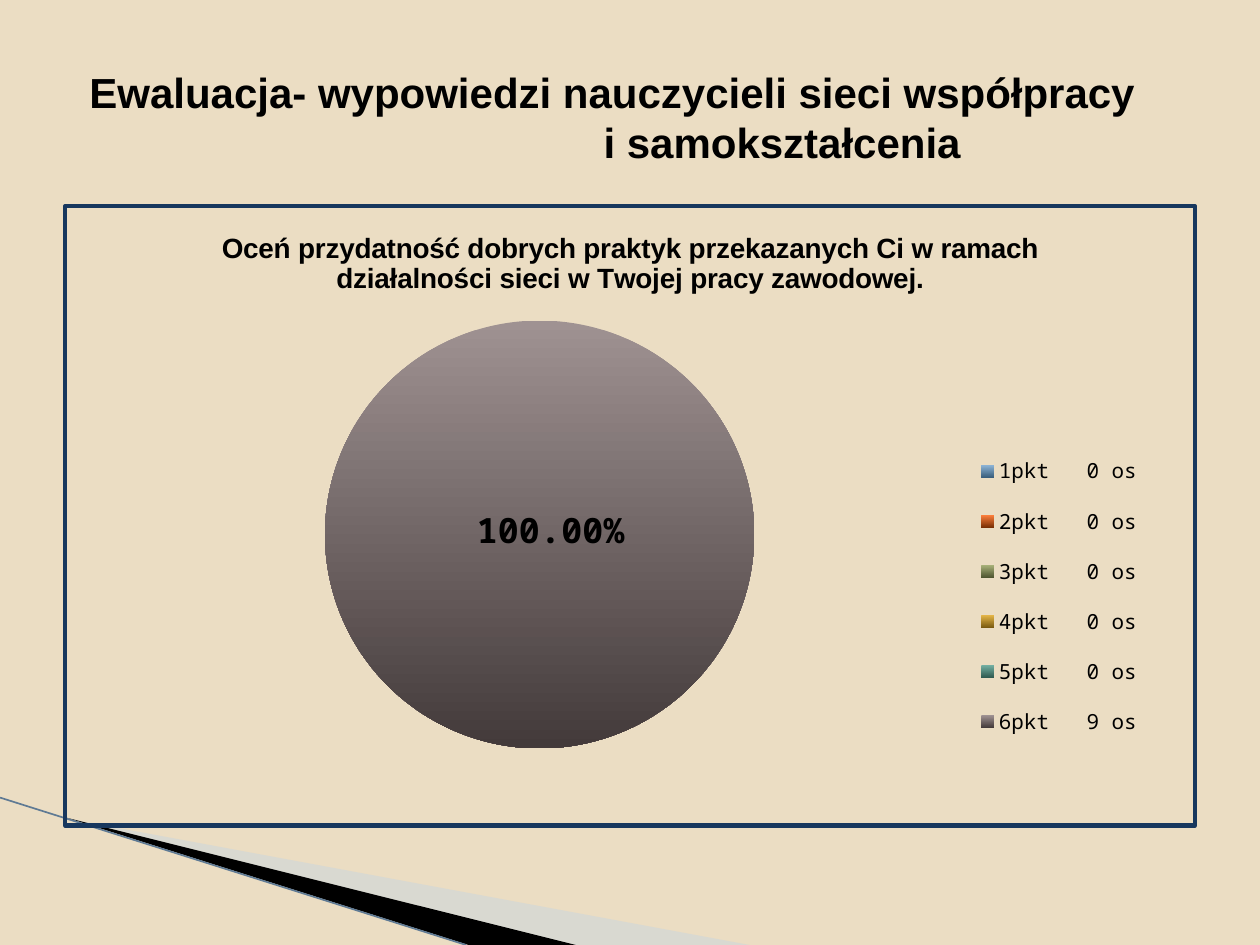
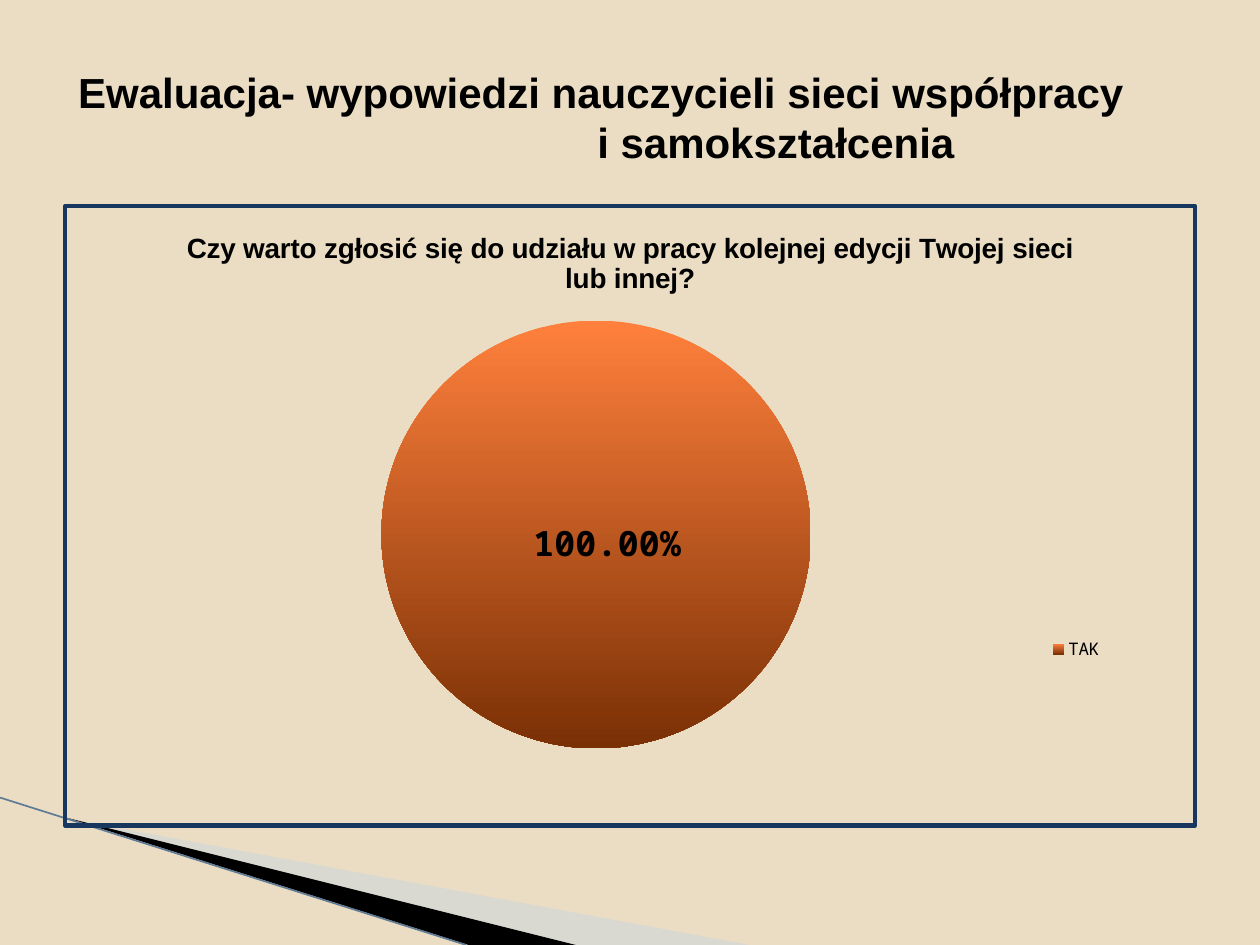
from dataclasses import dataclass
from lxml import etree
from pptx import Presentation
from pptx import util as u
from pptx.chart.data import CategoryChartData
from pptx.dml.color import RGBColor
from pptx.enum import chart as charts, shapes, text
from pptx.oxml import parse_xml
from pptx.oxml.ns import nsdecls, qn


@dataclass(frozen=True)
class Theme:
    sand: str = "EBDDC3"
    ink: str = "000000"
    frame: str = "17375E"
    mist: str = "C0D3E6"
    ray: str = "5F7A94"
    heading_font: str = "Arial"
    chart_font: str = "Noto Sans Mono"
    title_size: int = 24
    question_size: int = 16
    label_size: int = 20
    small_size: int = 10
    legend_size: int = 12


THEME = Theme()
BLUE = ("8FB6D8", "3A5F7D")
ORANGE = ("FF803C", "7A3005")
GREEN = ("A9B27A", "4F5630")
GOLD = ("E5B648", "7A5A10")
TEAL = ("73AFA2", "2F5A50")
GREY = ("9F9292", "433A3A")
TITLE_LINES = ("Ewaluacja- wypowiedzi nauczycieli sieci współpracy", "i samokształcenia")


def color(code):
    return RGBColor.from_string(code)


def style_font(font, name, size, bold=False):
    font.name = name
    font.size = u.Pt(size)
    font.bold = bold
    font.color.rgb = color(THEME.ink)


def write(para, words, indent=0, **style):
    props = para._p.get_or_add_pPr()
    props.set("marL", str(u.Inches(indent)))
    props.set("indent", "0")
    para.alignment = text.PP_ALIGN.LEFT
    para.space_before = u.Pt(0)
    span = para.add_run()
    span.text = words
    style_font(span.font, **style)


def arrange(parent, index, target=None, **place):
    for old in parent.findall(qn("c:layout")):
        parent.remove(old)
    layout = etree.Element(qn("c:layout"))
    manual = etree.SubElement(layout, qn("c:manualLayout"))
    if target:
        etree.SubElement(manual, qn("c:layoutTarget")).set("val", target)
    if "w" in place:
        for mode in ("xMode", "yMode"):
            etree.SubElement(manual, qn(f"c:{mode}")).set("val", "edge")
    for key, value in place.items():
        etree.SubElement(manual, qn(f"c:{key}")).set("val", str(value))
    parent.insert(index, layout)


class Builder:
    def __init__(self, theme):
        self.theme = theme
        self.deck = Presentation()
        self.deck.slide_width = u.Inches(10)
        self.deck.slide_height = u.Inches(7.5)
        self.page = None

    def start_page(self, indents):
        self.page = self.deck.slides.add_slide(self.deck.slide_layouts[5])
        fill = self.page.background.fill
        fill.solid()
        fill.fore_color.rgb = color(self.theme.sand)
        self.wedge([(0.55, 6.5), (5.95, 7.5), (4.56, 7.5)], self.theme.mist, 40)
        self.wedge([(0.53, 6.49), (4.57, 7.5), (3.72, 7.5)], self.theme.ink)
        self.line((0, 6.33), (3.7, 7.5), self.theme.ray, 0.95)
        self.title(indents)

    def title(self, indents):
        box = self.page.shapes.title
        box.left, box.top, box.width, box.height = map(u.Inches, (0.5, 0.3, 9, 1.25))
        frame = box.text_frame
        frame.word_wrap = True
        frame.auto_size = text.MSO_AUTO_SIZE.NONE
        frame.vertical_anchor = text.MSO_ANCHOR.MIDDLE
        for number, (words, indent) in enumerate(zip(TITLE_LINES, indents)):
            para = frame.add_paragraph() if number else frame.paragraphs[0]
            write(para, words, indent, name=self.theme.heading_font,
                  size=self.theme.title_size, bold=True)

    def wedge(self, points, shade, opacity=100):
        corners = [(u.Inches(x), u.Inches(y)) for x, y in points]
        outline = self.page.shapes.build_freeform(*corners[0])
        outline.add_line_segments(corners[1:], close=True)
        shape = outline.convert_to_shape()
        shape.shadow.inherit = False
        shape.line.fill.background()
        shape.fill.solid()
        shape.fill.fore_color.rgb = color(shade)
        if opacity < 100:
            tone = shape._element.spPr.find(f"{qn('a:solidFill')}/{qn('a:srgbClr')}")
            etree.SubElement(tone, qn("a:alpha")).set("val", str(opacity * 1000))

    def line(self, start, end, shade, weight):
        ray = self.page.shapes.add_connector(
            shapes.MSO_CONNECTOR.STRAIGHT, *map(u.Inches, start + end))
        ray.line.color.rgb = color(shade)
        ray.line.width = u.Pt(weight)
        etree.SubElement(ray._element.spPr, qn("a:effectLst"))

    def pie(self, question, values, shades, pie_left, legend, legend_size, label_offset):
        data = CategoryChartData()
        data.categories = list(values)
        data.add_series("Series 1", list(values.values()))
        chart = self.page.shapes.add_chart(
            charts.XL_CHART_TYPE.PIE,
            *map(u.Inches, (0.5, 1.62, 9, 4.95)), data).chart
        style_font(chart.font, self.theme.chart_font, self.theme.small_size)
        plot = chart.plots[0]
        plot.vary_by_categories = True
        points = plot.series[0].points
        for number, (top, bottom) in enumerate(shades):
            fill = points[number].format.fill
            fill.gradient()
            fill.gradient_angle = 270
            for stop, shade in zip(fill.gradient_stops, (top, bottom)):
                stop.color.rgb = color(shade)
        self.question(chart, question)
        self.legend(chart, legend, legend_size)
        self.share(chart, points[len(values) - 1], label_offset)
        area = chart.element.xpath("c:chart/c:plotArea")[0]
        arrange(area, 0, "inner", x=pie_left, y=0.18, w=0.38, h=0.7)
        self.border(chart)

    def question(self, chart, words):
        chart.has_title = True
        span = chart.chart_title.text_frame.paragraphs[0].add_run()
        span.text = words
        style_font(span.font, self.theme.heading_font, self.theme.question_size, True)

    def legend(self, chart, place, size):
        chart.has_legend = True
        chart.legend.position = charts.XL_LEGEND_POSITION.RIGHT
        chart.legend.include_in_layout = False
        style_font(chart.legend.font, self.theme.chart_font, size)
        arrange(chart.element.xpath("c:chart/c:legend")[0], 1, **place)

    def share(self, chart, point, offset):
        label = point.data_label
        style_font(label.font, self.theme.chart_font, self.theme.label_size, True)
        label.position = charts.XL_LABEL_POSITION.CENTER
        for flag in chart.element.xpath(".//c:dLbls//c:showVal"):
            flag.set("val", "0")
        for flag in chart.element.xpath(".//c:dLbls/c:showPercent"):
            flag.set("val", "0")
        item = chart.element.xpath(".//c:dLbl")[0]
        item.find(qn("c:showPercent")).set("val", "1")
        arrange(item, 1, x=offset[0], y=offset[1])
        number = etree.Element(qn("c:numFmt"), formatCode="0.00%", sourceLinked="0")
        item.insert(2, number)

    def border(self, chart):
        outline = parse_xml(
            f'<c:spPr {nsdecls("c", "a")}><a:noFill/><a:ln w="{u.Pt(2.5)}"><a:solidFill>'
            f'<a:srgbClr val="{self.theme.frame}"/></a:solidFill></a:ln></c:spPr>')
        chart.element.find(qn("c:chart")).addnext(outline)


def main():
    show = Builder(THEME)
    show.start_page(indents=(0.11, 4.19))
    votes = {f"{grade}pkt   {9 if grade == 6 else 0} os": 100 if grade == 6 else 0
             for grade in range(1, 7)}
    show.pie(
        "Oceń przydatność dobrych praktyk przekazanych Ci w ramach działalności "
        "sieci w Twojej pracy zawodowej.",
        votes, (BLUE, ORANGE, GREEN, GOLD, TEAL, GREY), pie_left=0.23,
        legend=dict(x=0.8, y=0.37, w=0.16, h=0.52),
        legend_size=THEME.legend_size, label_offset=(0.01, -0.18))
    show.start_page(indents=(0.02, 4.14))
    show.pie(
        "Czy warto zgłosić się do udziału w pracy kolejnej edycji Twojej sieci lub innej?",
        {"TAK": 100}, (ORANGE,), pie_left=0.28,
        legend=dict(x=0.86, y=0.68, w=0.07, h=0.07),
        legend_size=THEME.small_size, label_offset=(0.01, -0.16))
    show.deck.save("out.pptx")


if __name__ == "__main__":
    main()
